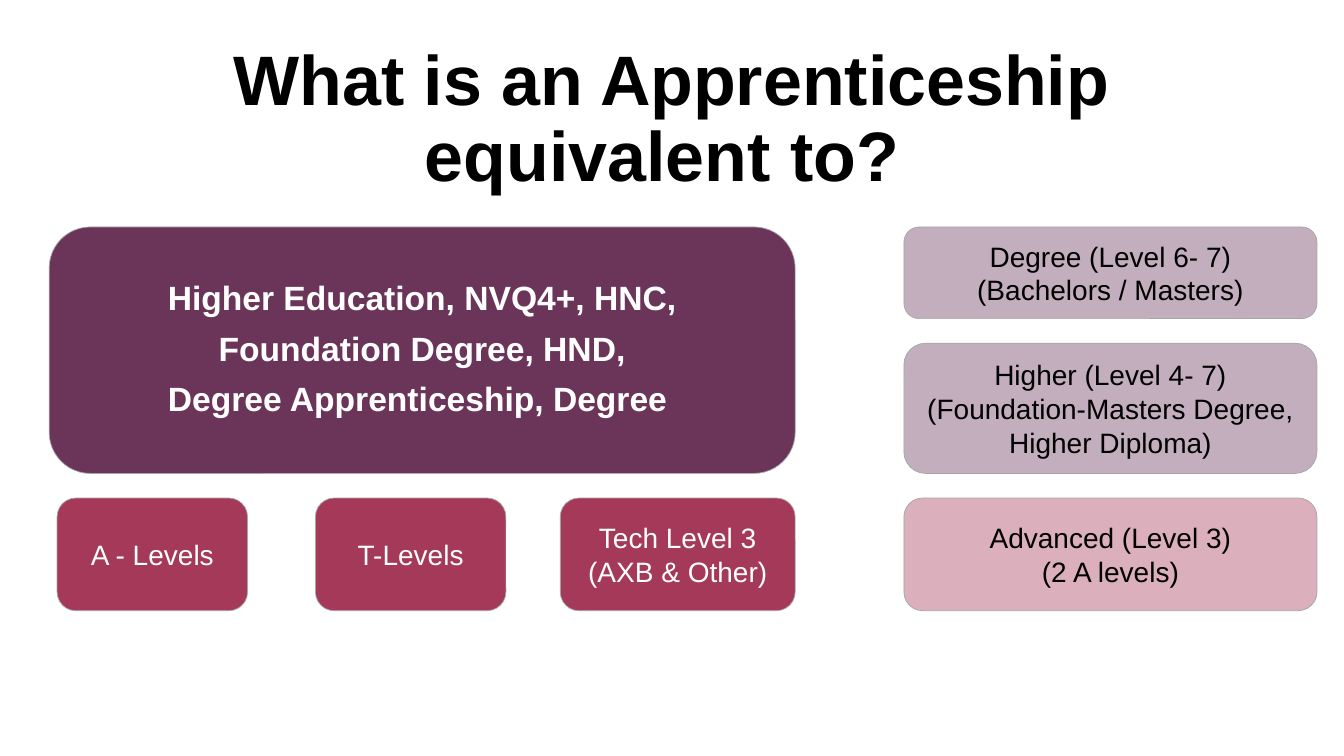
from lxml import etree
from pptx import Presentation
from pptx.dml.color import RGBColor
from pptx.enum import shapes, text
from pptx.oxml.ns import qn
from pptx.util import Cm, Pt

PLUM = RGBColor(0x6B, 0x35, 0x5A)
CRIMSON = RGBColor(0xA5, 0x39, 0x59)
GREY = RGBColor(0xA6, 0xA6, 0xA6)
BLACK = RGBColor(0, 0, 0)
WHITE = RGBColor(0xFF, 0xFF, 0xFF)

# Row heights and gap in cm, shared by both columns
ROWS = (2.31, 3.28, 2.84)
GAP = 0.62


def add_run(p, words, size, color, bold=False):
    r = p.add_run()
    r.text = words
    r.font.name = "Arial"
    r.font.size = Pt(size)
    r.font.bold = bold
    r.font.color.rgb = color


def add_card(s, box, lines, fill, color, size=20, alpha=None, bold=False,
             spacing=None, before=0):
    """Rounded card with one centred paragraph per line."""
    sp = s.shapes.add_shape(shapes.MSO_SHAPE.ROUNDED_RECTANGLE,
                            *(Cm(v) for v in box))
    sp.shadow.inherit = False
    sp.fill.solid()
    sp.fill.fore_color.rgb = fill
    if alpha is not None:
        clr = sp.fill._xPr.find(qn("a:solidFill"))[0]
        etree.SubElement(clr, qn("a:alpha")).set("val", str(alpha * 1000))
    sp.line.color.rgb = GREY
    sp.line.width = Pt(0.5)

    tf = sp.text_frame
    tf.word_wrap = True
    tf.vertical_anchor = text.MSO_ANCHOR.MIDDLE
    tf.margin_left = tf.margin_right = Cm(0.33)
    tf.margin_top = tf.margin_bottom = Cm(0.18)
    for i, words in enumerate(lines):
        p = tf.add_paragraph() if i else tf.paragraphs[0]
        p.alignment = text.PP_ALIGN.CENTER
        p.line_spacing = spacing
        p.space_before = Pt(before if i else 0)
        add_run(p, words, size, color, bold)


def add_title(s, x, y, w, h):
    tf = s.shapes.add_textbox(Cm(x), Cm(y), Cm(w), Cm(h)).text_frame
    tf.word_wrap = True
    p = tf.paragraphs[0]
    p.alignment = text.PP_ALIGN.CENTER
    p.line_spacing = 0.9
    add_run(p, "What is an Apprenticeship", 50, BLACK, True)
    p.add_line_break()
    add_run(p, "equivalent to? ", 50, BLACK, True)


def add_qualifications(s, x, y, w):
    # Large panel spans the first two rows
    panel_h = ROWS[0] + GAP + ROWS[1]
    add_card(s, (x, y, w, panel_h),
             ("Higher Education, NVQ4+, HNC,",
              " Foundation Degree, HND, ",
              "Degree Apprenticeship, Degree "),
             PLUM, WHITE, size=24, bold=True, spacing=0.9, before=10)

    # Level 3 cards below: offset, width, label
    for dx, card_w, label in ((0.2, 4.8, "A - Levels"),
                              (6.71, 4.8, "T-Levels"),
                              (w - 5.92, 5.92, "Tech Level 3 (AXB & Other)")):
        add_card(s, (x + dx, y + panel_h + GAP, card_w, ROWS[2]),
                 (label,), CRIMSON, WHITE)


def add_apprenticeships(s, x, y, w):
    levels = (
        (PLUM, ("Degree (Level 6- 7)", "(Bachelors / Masters)")),
        (PLUM, ("Higher (Level 4- 7)",
                "(Foundation-Masters Degree, Higher Diploma)")),
        (CRIMSON, ("Advanced (Level 3)", "(2 A levels)")),
    )
    for h, (fill, lines) in zip(ROWS, levels):
        add_card(s, (x, y, w, h), lines, fill, BLACK, alpha=40)
        y += h + GAP


def main():
    prs = Presentation()
    prs.slide_width, prs.slide_height = Cm(33.87), Cm(19.05)
    s = prs.slides.add_slide(prs.slide_layouts[6])
    add_title(s, 0, 1.02, 33.87, 3.68)
    add_qualifications(s, 1.24, 5.72, 18.8)
    add_apprenticeships(s, 22.78, 5.72, 10.41)
    prs.save("out.pptx")


if __name__ == "__main__":
    main()
